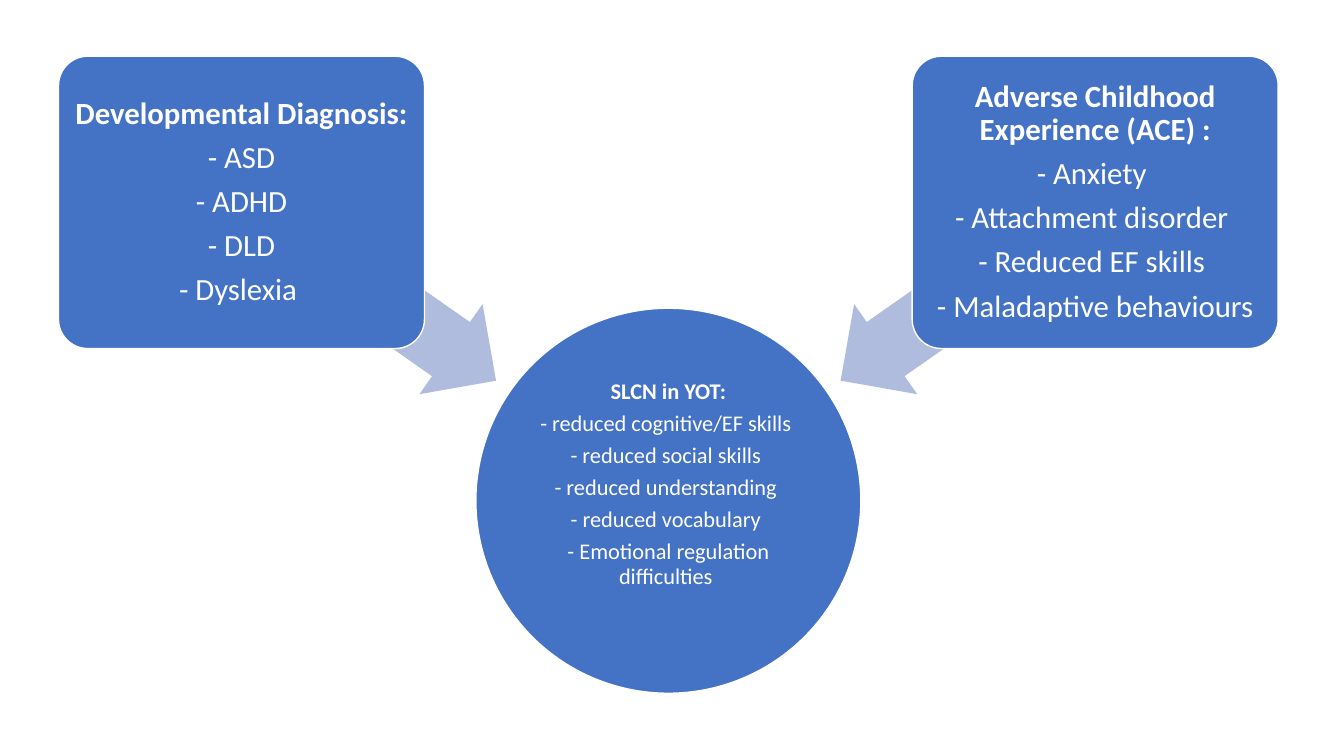
"""Build a slide where two groups of causes converge on one circle of needs."""
from pptx import Presentation
from pptx.dml.color import RGBColor
from pptx.enum.shapes import MSO_SHAPE
from pptx.enum.text import MSO_ANCHOR, PP_ALIGN
from pptx.util import Pt

NEEDS = [
    "SLCN in YOT:",
    "- reduced cognitive/EF skills ",
    "- reduced social skills ",
    "- reduced understanding ",
    "- reduced vocabulary ",
    "- Emotional regulation difficulties ",
]
CAUSES = [
    ["Developmental Diagnosis:", "- ASD", "- ADHD", "- DLD", "- Dyslexia "],
    ["Adverse Childhood Experience (ACE) :", "- Anxiety ", "- Attachment disorder ",
     "- Reduced EF skills ", "- Maladaptive behaviours"],
]

BLUE = RGBColor(0x44, 0x72, 0xC4)
PALE_BLUE = RGBColor(0xB0, 0xBC, 0xDE)
WHITE = RGBColor(0xFF, 0xFF, 0xFF)

AXIS = 477.4
CIRCLE_TOP, CIRCLE_SIZE = 220.2, 275
BOX_TOP, BOX_WIDTH, BOX_HEIGHT = 40.2, 261.4, 208.8
BOX_OFFSET = 304.9
ARROW_TOP, ARROW_WIDTH, ARROW_HEIGHT = 169, 221.8, 78.6
ARROW_OFFSET = 213.9
ARROW_TILT = 35
SPACE_RATIO = 0.35


def set_all(target, values):
    """Set each named format value on the target."""
    for name, value in values.items():
        setattr(target, name, value)


def add_part(slide, preset, center, top, width, height, fill):
    """Add a filled preset shape centred on a horizontal position."""
    part = slide.shapes.add_shape(
        preset, Pt(center - width / 2), Pt(top), Pt(width), Pt(height))
    part.shadow.inherit = False
    part.fill.solid()
    part.fill.fore_color.rgb = fill
    part.line.fill.background()
    return part


def write_list(part, lines, size, inset, bottom):
    """Outline the shape and write a bold heading with its items."""
    part.line.color.rgb = WHITE
    part.line.width = Pt(1)
    frame = part.text_frame
    set_all(frame, {
        "word_wrap": True, "vertical_anchor": MSO_ANCHOR.MIDDLE,
        "margin_left": Pt(inset), "margin_right": Pt(inset),
        "margin_top": Pt(inset), "margin_bottom": Pt(bottom),
    })
    for index, line in enumerate(lines):
        paragraph = frame.add_paragraph() if index else frame.paragraphs[0]
        set_all(paragraph, {
            "alignment": PP_ALIGN.CENTER, "line_spacing": 0.9,
            "space_after": Pt(size * SPACE_RATIO),
        })
        run = paragraph.add_run()
        run.text = line
        set_all(run.font, {"name": "Calibri", "size": Pt(size), "bold": index == 0})
        run.font.color.rgb = WHITE


def main():
    """Lay out the slide and save it."""
    deck = Presentation()
    set_all(deck, {"slide_width": Pt(960), "slide_height": Pt(540)})
    slide = deck.slides.add_slide(deck.slide_layouts[6])

    circle = add_part(slide, MSO_SHAPE.OVAL, AXIS, CIRCLE_TOP,
                      CIRCLE_SIZE, CIRCLE_SIZE, BLUE)
    write_list(circle, NEEDS, size=16, inset=1, bottom=24)

    for side, cause in zip((-1, 1), CAUSES):
        arrow = add_part(slide, MSO_SHAPE.LEFT_ARROW, AXIS + side * ARROW_OFFSET,
                         ARROW_TOP, ARROW_WIDTH, ARROW_HEIGHT, PALE_BLUE)
        arrow.adjustments[0] = 0.6
        arrow.adjustments[1] = 0.5
        arrow.rotation = 270 + side * (90 - ARROW_TILT)

        box = add_part(slide, MSO_SHAPE.ROUNDED_RECTANGLE, AXIS + side * BOX_OFFSET,
                       BOX_TOP, BOX_WIDTH, BOX_HEIGHT, BLUE)
        box.adjustments[0] = 0.1
        write_list(box, cause, size=22, inset=3.6, bottom=3.6)

    deck.save("out.pptx")


if __name__ == "__main__":
    main()
